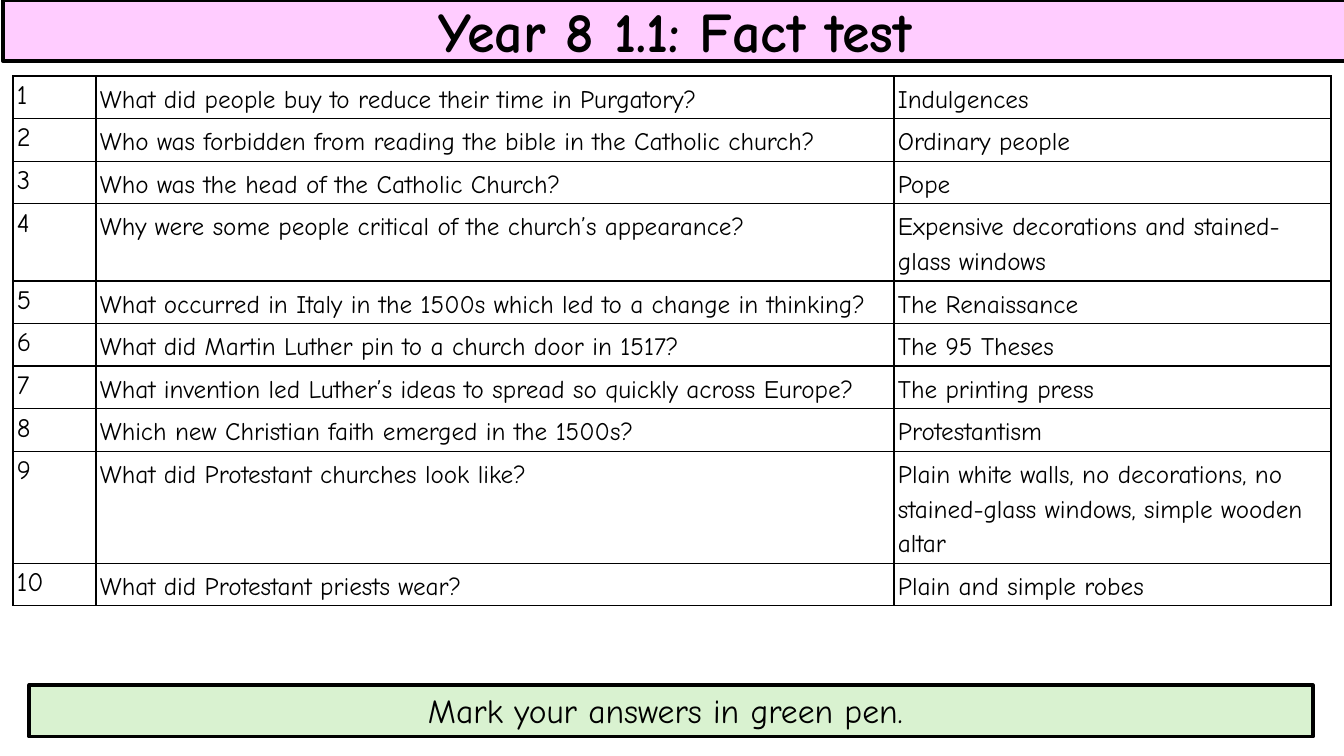
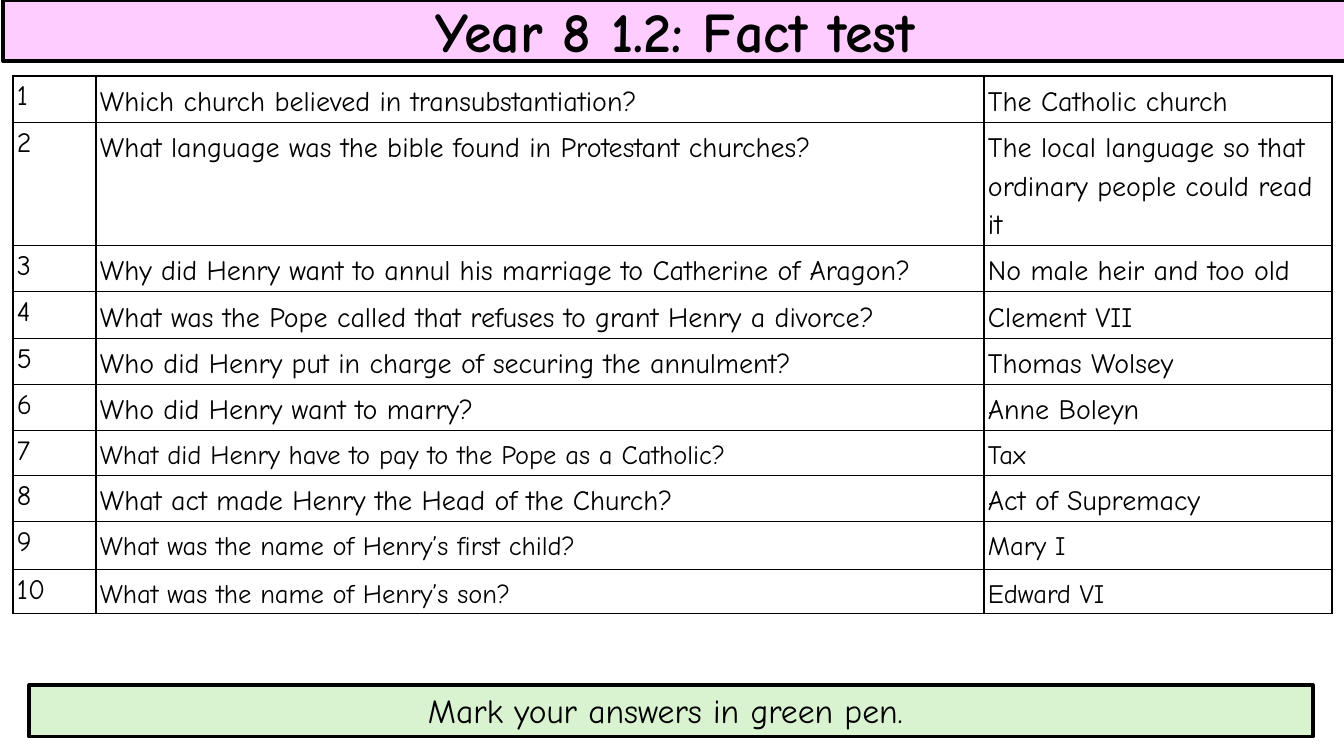
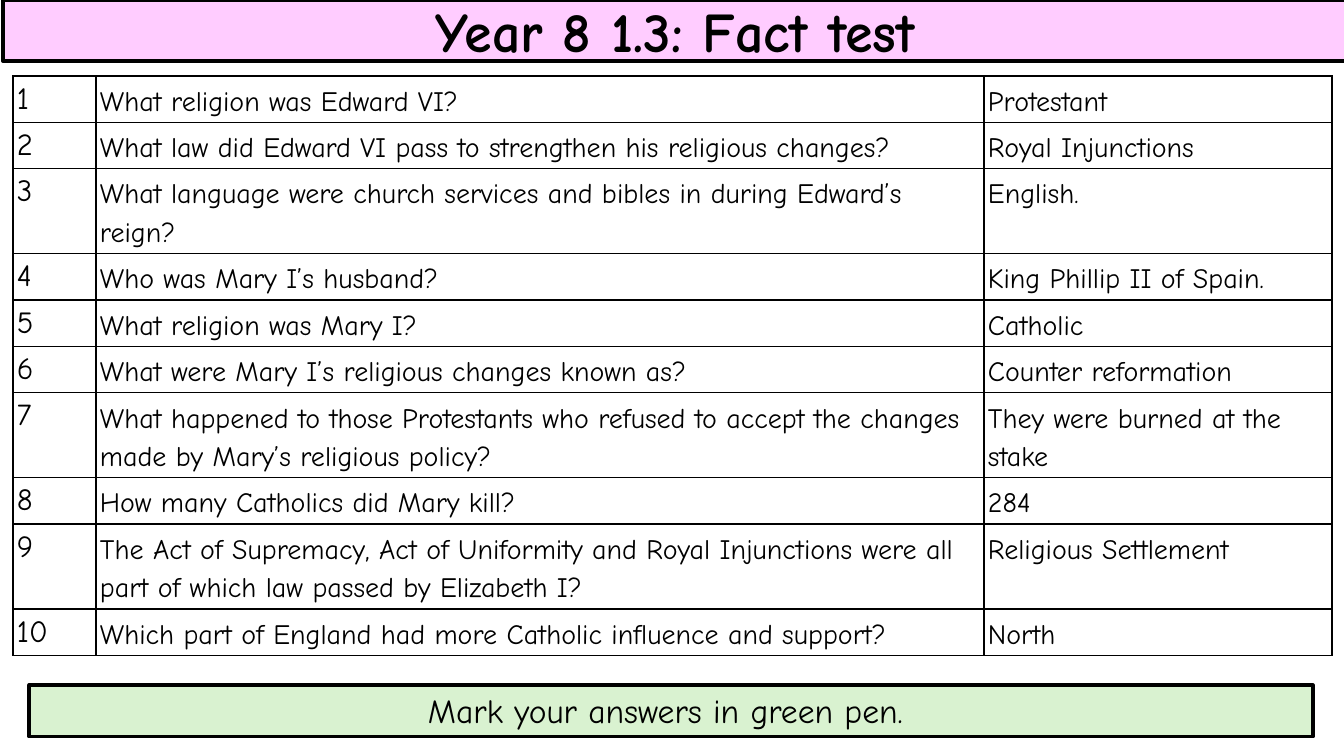
from dataclasses import dataclass

from lxml.etree import SubElement
from pptx import Presentation
from pptx.dml.color import RGBColor as RGB
from pptx.enum.shapes import MSO_SHAPE as SHAPE
from pptx.enum.text import MSO_ANCHOR as ANCHOR, PP_ALIGN as ALIGN
from pptx.oxml import parse_xml
from pptx.oxml.ns import nsdecls, qn
from pptx.util import Pt

FOOTER = "Mark your answers in green pen. "

TESTS = [
    {
        "title": "Year 8 1.1: Fact test",
        "cols": (83, 798, 437),
        "row": 42,
        "tall": {4: 77, 9: 112},
        "sizes": (19, 18),
        "small": (),
        "facts": [
            ("What did people buy to reduce their time in Purgatory?", "Indulgences"),
            ("Who was forbidden from reading the bible in the Catholic church?", "Ordinary people"),
            ("Who was the head of the Catholic Church?", "Pope"),
            ("Why were some people critical of the church’s appearance?",
             "Expensive decorations and stained-glass windows"),
            ("What occurred in Italy in the 1500s which led to a change in thinking?", "The Renaissance"),
            ("What did Martin Luther pin to a church door in 1517?", "The 95 Theses"),
            ("What invention led Luther’s ideas to spread so quickly across Europe?", "The printing press"),
            ("Which new Christian faith emerged in the 1500s?", "Protestantism"),
            ("What did Protestant churches look like?",
             "Plain white walls, no decorations, no stained-glass windows, simple wooden altar"),
            ("What did Protestant priests wear?", "Plain and simple robes"),
        ],
    },
    {
        "title": "Year 8 1.2: Fact test",
        "cols": (83, 888, 348),
        "row": 44,
        "tall": {2: 123, 9: 48},
        "sizes": (20, 20),
        "small": (7, 9, 10),
        "facts": [
            ("Which church believed in transubstantiation?", "The Catholic church"),
            ("What language was the bible found in Protestant churches?",
             "The local language so that ordinary people could read it"),
            ("Why did Henry want to annul his marriage to Catherine of Aragon?", "No male heir and too old"),
            ("What was the Pope called that refuses to grant Henry a divorce?", "Clement VII"),
            ("Who did Henry put in charge of securing the annulment?", "Thomas Wolsey"),
            ("Who did Henry want to marry?", "Anne Boleyn"),
            ("What did Henry have to pay to the Pope as a Catholic?", "Tax"),
            ("What act made Henry the Head of the Church?", "Act of Supremacy"),
            ("What was the name of Henry’s first child?", "Mary I"),
            ("What was the name of Henry’s son?", "Edward VI"),
        ],
    },
    {
        "title": "Year 8 1.3: Fact test",
        "cols": (83, 888, 348),
        "row": 46,
        "tall": {3: 85, 7: 85, 9: 85},
        "sizes": (22, 20),
        "small": (),
        "facts": [
            ("What religion was Edward VI?", "Protestant"),
            ("What law did Edward VI pass to strengthen his religious changes?", "Royal Injunctions"),
            ("What language were church services and bibles in during Edward’s reign?", "English."),
            ("Who was Mary I’s husband?", "King Phillip II of Spain."),
            ("What religion was Mary I?", "Catholic"),
            ("What were Mary I’s religious changes known as?", "Counter reformation"),
            ("What happened to those Protestants who refused to accept the changes made by Mary’s religious policy?",
             "They were burned at the stake"),
            ("How many Catholics did Mary kill?", "284"),
            ("The Act of Supremacy, Act of Uniformity and Royal Injunctions were all part of which law passed "
             "by Elizabeth I?", "Religious Settlement"),
            ("Which part of England had more Catholic influence and support?", "North"),
        ],
    },
]


@dataclass(frozen=True)
class Theme:
    font: str = "Comic Neue"
    ink: str = "000000"
    paper: str = "FFFFFF"
    title_fill: str = "FFCCFF"
    footer_fill: str = "D9F2D0"
    title_size: int = 40
    footer_size: int = 24
    small_size: int = 19


THEME = Theme()
SLIDE = (1344, 756)
TITLE_BOX = (3, 0, 1344, 61)
FOOTER_BOX = (29, 685, 1284, 52)
TABLE_AT = (13, 76)
CELL_INSET = 4


def px(n):
    return round(n * 9144000 / 1008)


def style(p, size, bold=False):
    for r in p.runs:
        r.font.name = THEME.font
        r.font.size = Pt(size)
        r.font.bold = bold
        r.font.color.rgb = RGB.from_string(THEME.ink)


def add_band(s, box, text, fill, line, size, anchor, bold=False):
    sp = s.shapes.add_shape(SHAPE.RECTANGLE, *map(px, box))
    sp.shadow.inherit = False
    sp.fill.solid()
    sp.fill.fore_color.rgb = RGB.from_string(fill)
    sp.line.color.rgb = RGB.from_string(THEME.ink)
    sp.line.width = Pt(line)
    tf = sp.text_frame
    tf.word_wrap = True
    tf.vertical_anchor = anchor
    tf.text = text
    p = tf.paragraphs[0]
    p.alignment = ALIGN.CENTER
    style(p, size, bold)


def add_borders(cell):
    props = cell._tc.get_or_add_tcPr()
    for i, side in enumerate(("lnL", "lnR", "lnT", "lnB")):
        ln = parse_xml(f'<a:{side} {nsdecls("a")} w="{Pt(1)}"/>')
        fill = SubElement(ln, qn("a:solidFill"))
        SubElement(fill, qn("a:srgbClr"), val=THEME.ink)
        props.insert(i, ln)


def fill_cell(cell, text, size, is_number):
    cell.fill.solid()
    cell.fill.fore_color.rgb = RGB.from_string(THEME.paper)
    cell.margin_left = cell.margin_right = px(CELL_INSET)
    cell.margin_top = cell.margin_bottom = 0 if is_number else px(CELL_INSET)
    cell.text = text
    p = cell.text_frame.paragraphs[0]
    p.line_spacing = 1.15 if is_number else 1.19
    p.space_after = Pt(10 if is_number else 6)
    style(p, size)
    add_borders(cell)


def add_facts(s, test):
    facts, cols = test["facts"], test["cols"]
    heights = [test["tall"].get(n, test["row"]) for n in range(1, len(facts) + 1)]
    frame = s.shapes.add_table(len(facts), len(cols), *map(px, (*TABLE_AT, sum(cols), sum(heights))))
    table = frame.table
    table.first_row = table.horz_banding = False
    for col, width in zip(table.columns, cols):
        col.width = px(width)
    number_size, text_size = test["sizes"]
    for n, (row, height, fact) in enumerate(zip(table.rows, heights, facts), 1):
        row.height = px(height)
        size = THEME.small_size if n in test["small"] else text_size
        for i, (cell, text) in enumerate(zip(row.cells, (str(n), *fact))):
            fill_cell(cell, text, size if i else number_size, i == 0)


def main():
    prs = Presentation()
    prs.slide_width, prs.slide_height = map(px, SLIDE)
    for test in TESTS:
        s = prs.slides.add_slide(prs.slide_layouts[6])
        add_facts(s, test)
        add_band(s, TITLE_BOX, test["title"], THEME.title_fill, 3, THEME.title_size, ANCHOR.MIDDLE, True)
        add_band(s, FOOTER_BOX, FOOTER, THEME.footer_fill, 2.25, THEME.footer_size, ANCHOR.TOP)
    prs.save("out.pptx")


if __name__ == "__main__":
    main()
